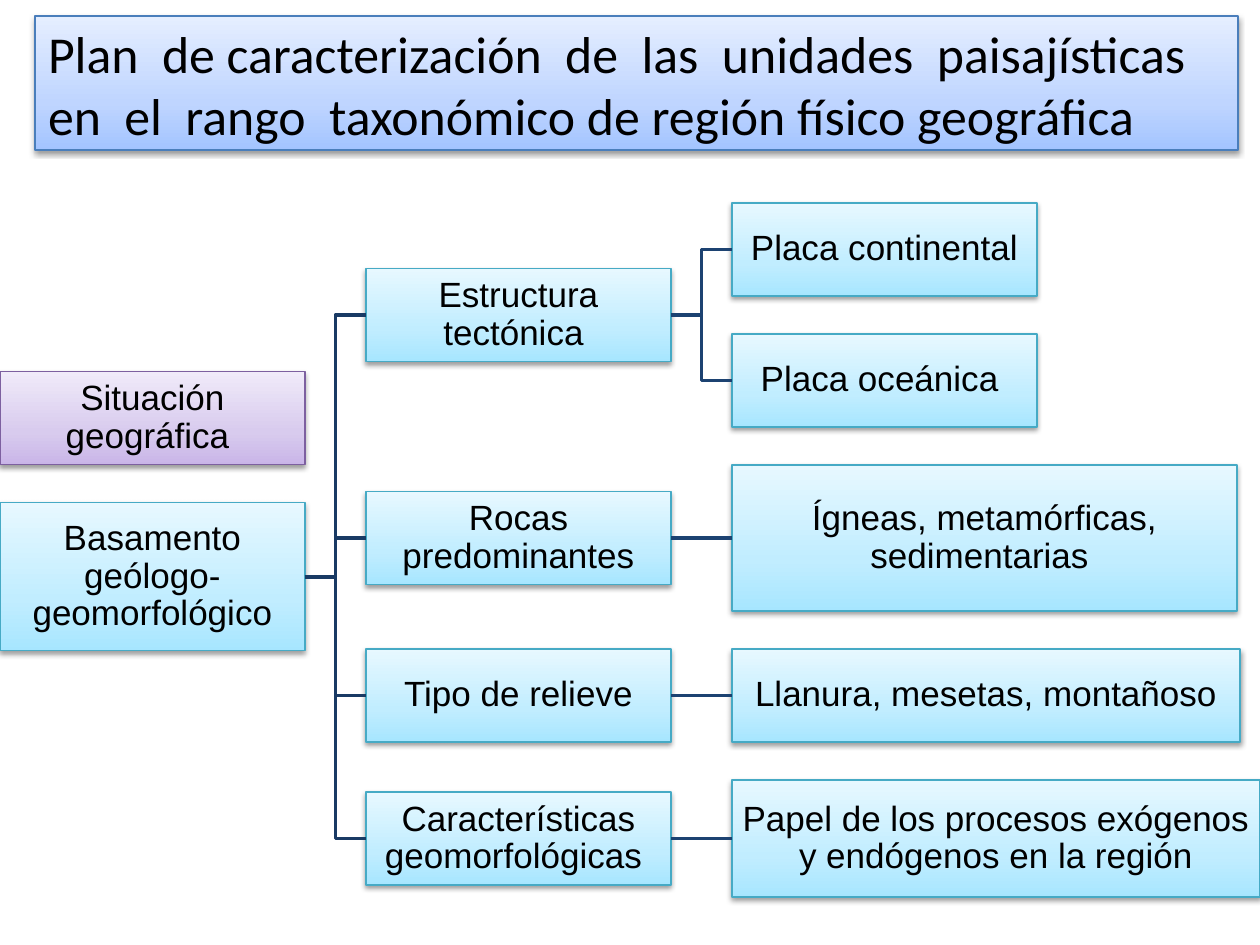
from pptx import Presentation
from pptx.dml.color import RGBColor
from pptx.enum.shapes import MSO_CONNECTOR, MSO_SHAPE
from pptx.enum.text import MSO_ANCHOR, PP_ALIGN
from pptx.oxml import parse_xml
from pptx.oxml.ns import nsdecls
from pptx.util import Pt

RECT = MSO_SHAPE.RECTANGLE
STRAIGHT, ELBOW = MSO_CONNECTOR.STRAIGHT, MSO_CONNECTOR.ELBOW
MIDDLE, TOP = MSO_ANCHOR.MIDDLE, MSO_ANCHOR.TOP
CENTER, LEFT = PP_ALIGN.CENTER, PP_ALIGN.LEFT
LEFT_SIDE, RIGHT_SIDE = 1, 3

TITLE = ("Plan  de caracterización  de  las  unidades  paisajísticas  "
         "en  el  rango  taxonómico de región físico geográfica")
PLACE = "Situación geográfica "
ROOT = "Basamento geólogo-geomorfológico"
# branch text, then its leaves as (text, width, height)
BRANCHES = [
    ("Estructura tectónica ", [("Placa continental", 305, 93),
                               ("Placa oceánica ", 305, 93)]),
    ("Rocas predominantes", [("Ígneas, metamórficas, sedimentarias ", 505, 146)]),
    ("Tipo de relieve", [("Llanura, mesetas, montañoso", 508, 93)]),
    ("Características geomorfológicas ",
     [("Papel de los procesos exógenos y endógenos en la región", 528, 117)]),
]

COLORS = {"text": "000000", "trunk": "193A64", "twig": "1C4271"}
# gradient from bottom to top, then the outline
THEMES = {
    "blue": (("A3C4FF", "BFD5FF", "E5EEFF"), "4A7EBB"),
    "purple": (("C9B5E8", "D8CBEE", "F0EAF9"), "7D60A0"),
    "aqua": (("A7E6FF", "C1EDFF", "E7F8FF"), "46AAC5"),
}
STOPS = (0, 35000, 100000)
COLS = (0, 366, 732)
WIDTH, HEIGHT, GAP, ROOT_H = 305, 93, 38, 148
LEAF_TOP = 203


def px(n):
    return round(n * 914400 / 126)


def rgb(name):
    return RGBColor.from_string(COLORS[name])


def style(box, theme):
    """Give a box its gradient, outline and soft shadow."""
    tones, edge = THEMES[theme]
    stops = "".join(f'<a:gs pos="{pos}"><a:srgbClr val="{tone}"/></a:gs>'
                    for pos, tone in zip(STOPS, tones))
    props = box.element.spPr
    props.insert(2, parse_xml(
        f'<a:gradFill {nsdecls("a")} rotWithShape="1"><a:gsLst>{stops}</a:gsLst>'
        '<a:lin ang="16200000" scaled="1"/></a:gradFill>'))
    box.line.color.rgb = RGBColor.from_string(edge)
    box.line.width = Pt(0.75)
    box.shadow.inherit = False
    props[-1].append(parse_xml(
        f'<a:outerShdw {nsdecls("a")} blurRad="{Pt(3.1)}" dist="{Pt(1.6)}" '
        'dir="5400000" rotWithShape="0"><a:srgbClr val="000000">'
        '<a:alpha val="38000"/></a:srgbClr></a:outerShdw>'))


def add_box(slide, text, x, y, w, h, theme, font="Arial", size=20,
            inset=(1, 1), align=CENTER, anchor=MIDDLE):
    box = slide.shapes.add_shape(RECT, px(x), px(y), px(w), px(h))
    style(box, theme)
    frame = box.text_frame
    frame.word_wrap = True
    frame.vertical_anchor = anchor
    frame.margin_left = frame.margin_right = px(inset[0])
    frame.margin_top = frame.margin_bottom = px(inset[1])
    para = frame.paragraphs[0]
    para.alignment = align
    run = para.add_run()
    run.text = text
    run.font.name, run.font.size = font, Pt(size)
    run.font.color.rgb = rgb("text")
    return box


def add_node(slide, text, col, mid, w=WIDTH, h=HEIGHT, theme="aqua"):
    """Add a tree box in a column, centred on height mid."""
    box = add_box(slide, text, COLS[col], mid - h / 2, w, h, theme)
    box.text_frame.paragraphs[0].line_spacing = 0.9
    return box


def join(slide, start, end, kind, color):
    line = slide.shapes.add_connector(kind, 0, 0, 0, 0)
    line.begin_connect(start, RIGHT_SIDE)
    line.end_connect(end, LEFT_SIDE)
    line.line.color.rgb = rgb(color)
    line.line.width = Pt(2)
    line.element.spPr.append(parse_xml(f'<a:effectLst {nsdecls("a")}/>'))


def add_tree(slide):
    """Stack the leaves, then centre each parent on its children."""
    y, mids, nodes = LEAF_TOP, [], []
    for text, leaves in BRANCHES:
        spots, twigs = [], []
        for label, w, h in leaves:
            spots.append(y + h / 2)
            twigs.append(add_node(slide, label, 2, spots[-1], w, h))
            y += h + GAP
        mids.append((spots[0] + spots[-1]) / 2)
        node = add_node(slide, text, 1, mids[-1])
        nodes.append(node)
        for twig in twigs:
            join(slide, node, twig, STRAIGHT if len(twigs) == 1 else ELBOW, "twig")
    mid = (mids[0] + mids[-1]) / 2
    root = add_node(slide, ROOT, 0, mid, h=ROOT_H)
    add_node(slide, PLACE, 0, mid - ROOT_H / 2 - GAP - HEIGHT / 2, theme="purple")
    for node in nodes:
        join(slide, root, node, ELBOW, "trunk")


def main():
    deck = Presentation()
    deck.slide_width, deck.slide_height = px(1260), px(945)
    slide = deck.slides.add_slide(deck.slide_layouts[6])
    title = add_box(slide, TITLE, 35, 16, 1203, 134, "blue", "Calibri", 29.6,
                    (13, 6), LEFT, TOP)
    title.text_frame.paragraphs[0].space_before = Pt(2)
    add_tree(slide)
    deck.save("out.pptx")


if __name__ == "__main__":
    main()
